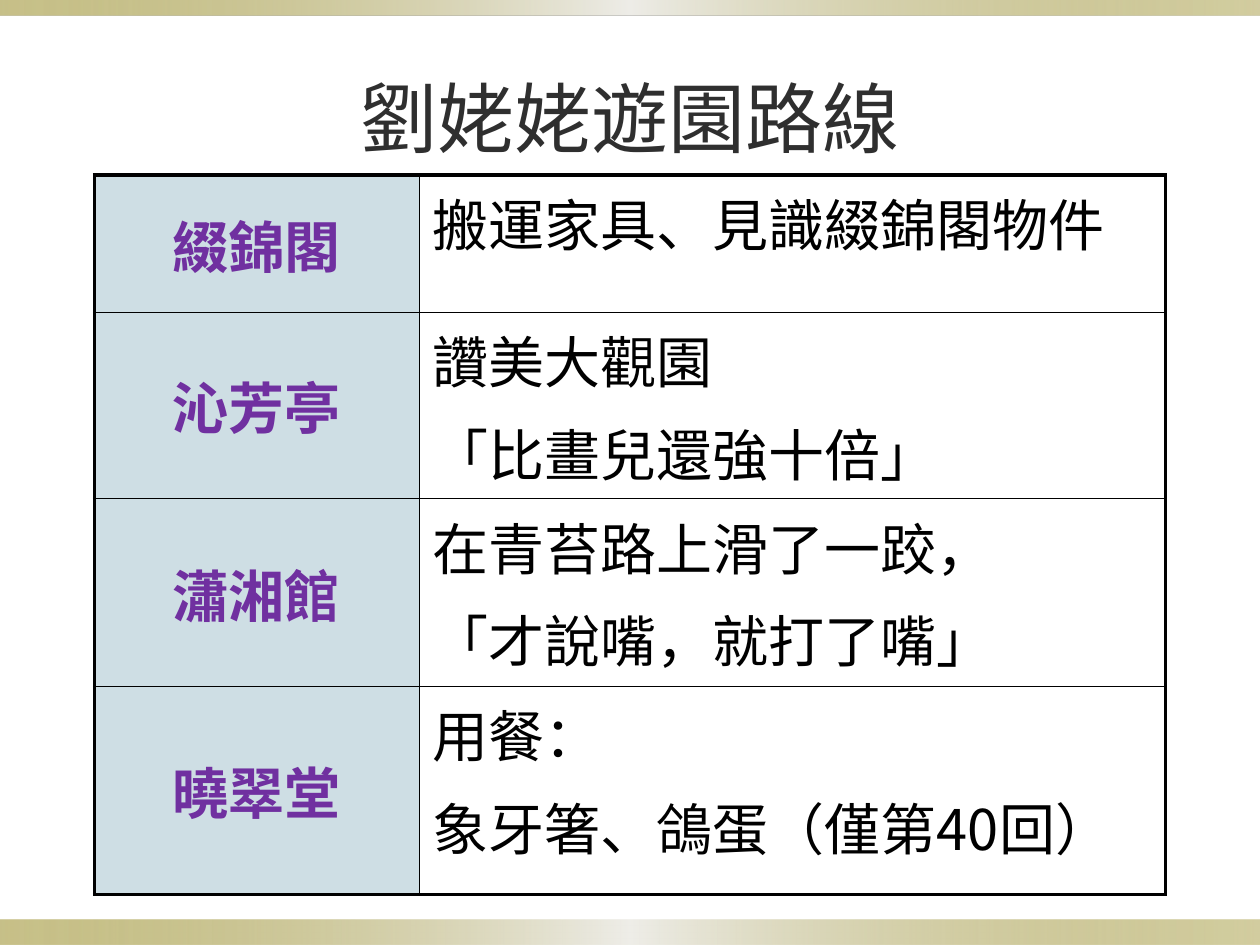
from lxml import etree
from pptx import Presentation
from pptx import util as u
from pptx.dml.color import RGBColor
from pptx.enum import shapes, text
from pptx.oxml import ns

# Content
TITLE = "劉姥姥遊園路線"
STOPS = [
    ("綴錦閣", ["搬運家具、見識綴錦閣物件"]),
    ("沁芳亭", ["讚美大觀園", "「比畫兒還強十倍」"]),
    ("瀟湘館", ["在青苔路上滑了一跤，", "「才說嘴，就打了嘴」"]),
    ("曉翠堂", ["用餐：", "象牙箸、鴿蛋（僅第40回）"]),
]

# Style and measures in points
FONT = "Noto Sans CJK SC"
COLORS = {"title": "2F2F2F", "place": "7030A0", "event": "000000",
          "place_fill": "CEDEE4", "border": "000000",
          "band": "918415", "band_middle": "EEEDE8"}
WIDTH, HEIGHT = 720, 540
BANDS = [(0, 8.64), (525.6, 14.4)]
BAND_STOPS = [(0, "band", 50), (50, "band_middle", 100), (100, "band", 40)]
COLUMNS = [185.76, 426.24]
ROWS = [78.48, 97.2, 107.28, 118.8]
OUTER, INNER = 2.25, 1


def add_child(parent, tag, **attributes):
    return etree.SubElement(parent, ns.qn(tag), attributes)


def add_band(page, top, height):
    band = page.shapes.add_shape(shapes.MSO_SHAPE.RECTANGLE, 0, u.Pt(top),
                                 u.Pt(WIDTH), u.Pt(height))
    band.shadow.inherit = False
    band.line.fill.background()
    band.fill.gradient()
    band.fill.gradient_angle = 0
    stops = band._element.spPr.find(".//" + ns.qn("a:gsLst"))
    for stop in list(stops):
        stops.remove(stop)
    for position, name, opacity in BAND_STOPS:
        stop = add_child(stops, "a:gs", pos=str(position * 1000))
        color = add_child(stop, "a:srgbClr", val=COLORS[name])
        add_child(color, "a:alpha", val=str(opacity * 1000))


def style(para, size, color, bold=False):
    font = para.font
    font.size, font.bold, font.name = u.Pt(size), bold, FONT
    font.color.rgb = RGBColor.from_string(COLORS[color])
    add_child(font._rPr, "a:ea", typeface=FONT)


def set_borders(cell, widths):
    properties = cell._tc.get_or_add_tcPr()
    for index, (side, width) in enumerate(widths.items()):
        line = etree.Element(ns.qn("a:ln" + side), w=str(u.Pt(width)))
        fill = add_child(line, "a:solidFill")
        add_child(fill, "a:srgbClr", val=COLORS["border"])
        properties.insert(index, line)


def fill_cell(cell, lines, is_place):
    if is_place:
        cell.fill.solid()
        cell.fill.fore_color.rgb = RGBColor.from_string(COLORS["place_fill"])
        cell.vertical_anchor = text.MSO_ANCHOR.MIDDLE
    else:
        cell.fill.background()
    cell.text = "\n".join(lines)
    for index, para in enumerate(cell.text_frame.paragraphs):
        para.alignment = text.PP_ALIGN.CENTER if is_place else text.PP_ALIGN.LEFT
        if index:
            para.space_before = u.Pt(6.4)
        style(para, 32, "place" if is_place else "event", is_place)


def add_route_table(page):
    frame = page.shapes.add_table(len(ROWS), len(COLUMNS), u.Pt(54), u.Pt(100),
                                  u.Pt(sum(COLUMNS)), u.Pt(sum(ROWS)))
    table = frame.table
    table.first_row = table.horz_banding = False
    for column, width in zip(table.columns, COLUMNS):
        column.width = u.Pt(width)
    for r, (place, events) in enumerate(STOPS):
        table.rows[r].height = u.Pt(ROWS[r])
        for c, lines in enumerate(([place], events)):
            cell = table.cell(r, c)
            fill_cell(cell, lines, is_place=c == 0)
            edges = {"L": c == 0, "R": c == len(COLUMNS) - 1,
                     "T": r == 0, "B": r == len(ROWS) - 1}
            set_borders(cell, {side: OUTER if outer else INNER
                               for side, outer in edges.items()})


def main():
    deck = Presentation()
    deck.slide_width, deck.slide_height = u.Pt(WIDTH), u.Pt(HEIGHT)
    page = deck.slides.add_slide(deck.slide_layouts.get_by_name("Title Only"))

    # Bands along the top and bottom edges
    for top, height in BANDS:
        add_band(page, top, height)

    # Title
    title = page.shapes.title
    title.left, title.top = u.Pt(36), u.Pt(21.6)
    title.width, title.height = u.Pt(648), u.Pt(90)
    title.text_frame.text = TITLE
    title.text_frame.vertical_anchor = text.MSO_ANCHOR.MIDDLE
    para = title.text_frame.paragraphs[0]
    para.alignment = text.PP_ALIGN.CENTER
    style(para, 44, "title")

    # Places on the route and what happens there
    add_route_table(page)
    deck.save("out.pptx")


if __name__ == "__main__":
    main()
